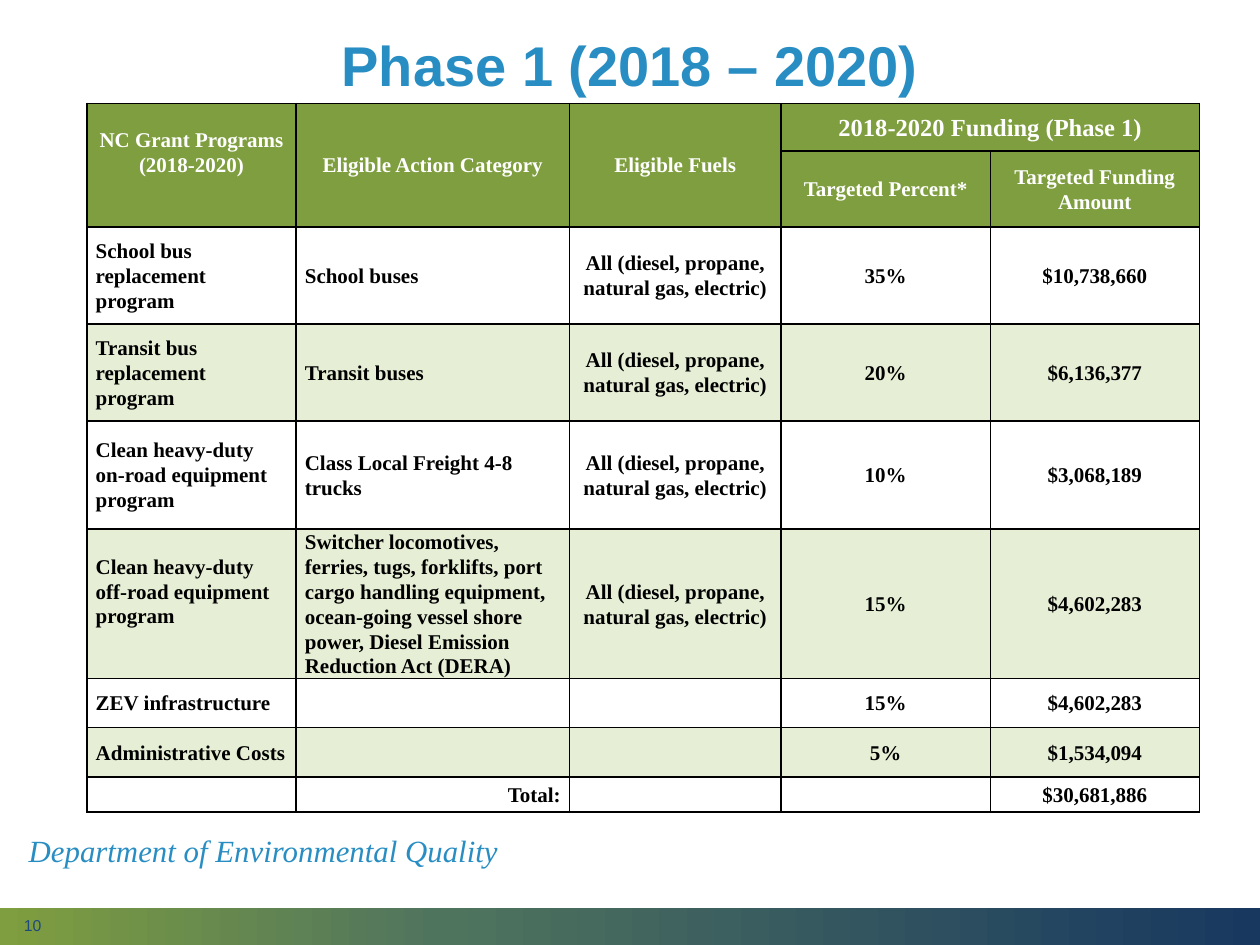
from lxml import etree
from pptx import Presentation
from pptx.dml.color import RGBColor
from pptx.enum import shapes, text
from pptx.oxml.ns import qn
from pptx.util import Inches, Pt

COLORS = {"green": "7F9E3F", "pale": "E6EFD6", "white": "FFFFFF", "black": "000000",
          "blue": "288DC2", "slate": "1F497D", "teal": "4F745E", "navy": "183860"}
SERIF, SANS = "Times New Roman", "Arial"
LEFT, CENTER, RIGHT = text.PP_ALIGN.LEFT, text.PP_ALIGN.CENTER, text.PP_ALIGN.RIGHT

TITLE = "Phase 1 (2018 – 2020)"
DEPARTMENT = "Department of Environmental Quality"
PAGE = "10"
FUELS = "All (diesel, propane, natural gas, electric)"
ROWS = [
    ["NC Grant Programs (2018-2020)", "Eligible Action Category", "Eligible Fuels",
     "2018-2020 Funding (Phase 1)", ""],
    ["", "", "", "Targeted Percent*", "Targeted Funding Amount"],
    ["School bus replacement program", "School buses", FUELS, "35%", "$10,738,660"],
    ["Transit bus replacement program", "Transit buses", FUELS, "20%", "$6,136,377"],
    ["Clean heavy-duty on-road equipment program", "Class Local Freight 4-8 trucks",
     FUELS, "10%", "$3,068,189"],
    ["Clean heavy-duty off-road equipment program",
     "Switcher locomotives, ferries, tugs, forklifts, port cargo handling equipment, "
     "ocean-going vessel shore power, Diesel Emission Reduction Act (DERA)",
     FUELS, "15%", "$4,602,283"],
    ["ZEV infrastructure", "", "", "15%", "$4,602,283"],
    ["Administrative Costs", "", "", "5%", "$1,534,094"],
    ["", "Total:", "", "", "$30,681,886"],
]
COL_WIDTHS = [1.66, 2.17, 1.68, 1.66, 1.66]
ROW_HEIGHTS = [0.38, 0.6, 0.77, 0.77, 0.86, 1.18, 0.39, 0.39, 0.28]
MERGES = [((0, 0), (1, 0)), ((0, 1), (1, 1)), ((0, 2), (1, 2)), ((0, 3), (0, 4))]
HEADER_ROWS = 2
RAISED = {(0, 0), (5, 0)}  # cells whose text sits above the middle
BAR_STOPS = [(0, "green"), (35, "teal"), (100, "navy")]


def rgb(name):
    return RGBColor.from_string(COLORS[name])


def write(p, words, color, align=LEFT, spacing=1.0, **font):
    p.alignment, p.line_spacing = align, spacing
    if not words:
        etree.SubElement(p._p, qn("a:endParaRPr"), sz=str(font["size"].pt * 100)[:4])
        return
    r = p.add_run()
    r.text = words
    r.font.color.rgb = rgb(color)
    for key, value in font.items():
        setattr(r.font, key, value)


def frame(tf, **margins):
    tf.word_wrap = True
    tf.auto_size = text.MSO_AUTO_SIZE.NONE
    tf.vertical_anchor = text.MSO_ANCHOR.MIDDLE
    for side, value in margins.items():
        setattr(tf, "margin_" + side, Inches(value))
    return tf.paragraphs[0]


def add_label(s, box, words, color, **fmt):
    p = frame(s.shapes.add_textbox(*map(Inches, box)).text_frame, top=0, bottom=0)
    write(p, words, color, **fmt)


def add_bar(s):
    bar = s.shapes.add_shape(shapes.MSO_SHAPE.RECTANGLE,
                             *map(Inches, (0, 7.21, 10, 0.29)))
    bar.shadow.inherit = False
    bar.line.fill.background()
    bar.fill.gradient()
    bar.fill.gradient_angle = 0
    stops = bar._element.spPr.find(".//" + qn("a:gsLst"))
    for old in list(stops):
        stops.remove(old)
    for percent, color in BAR_STOPS:
        stop = etree.SubElement(stops, qn("a:gs"), pos=str(percent * 1000))
        etree.SubElement(stop, qn("a:srgbClr"), val=COLORS[color])


def add_borders(cell):
    """Put a 1 pt black line on every side, ahead of the cell's fill."""
    tc_pr = cell._tc.get_or_add_tcPr()
    for i, side in enumerate(("lnL", "lnR", "lnT", "lnB")):
        line = etree.Element(qn("a:" + side), w=str(Pt(1)))
        fill = etree.SubElement(line, qn("a:solidFill"))
        etree.SubElement(fill, qn("a:srgbClr"), val=COLORS["black"])
        tc_pr.insert(i, line)


def alignment(row, col, words):
    if words == "Total:":
        return RIGHT
    return CENTER if row < HEADER_ROWS or col > 1 else LEFT


def add_funding_table(s):
    table = s.shapes.add_table(len(ROWS), len(COL_WIDTHS), Inches(0.69), Inches(0.82),
                               Inches(sum(COL_WIDTHS)), Inches(sum(ROW_HEIGHTS))).table
    for column, width in zip(table.columns, COL_WIDTHS):
        column.width = Inches(width)
    for table_row, height in zip(table.rows, ROW_HEIGHTS):
        table_row.height = Inches(height)
    for first, last in MERGES:
        table.cell(*first).merge(table.cell(*last))
    for row, values in enumerate(ROWS):
        header = row < HEADER_ROWS
        fill = "green" if header else ("white", "pale")[row % 2]
        for col, words in enumerate(values):
            cell = table.cell(row, col)
            cell.fill.solid()
            cell.fill.fore_color.rgb = rgb(fill)
            add_borders(cell)
            cell.vertical_anchor = text.MSO_ANCHOR.MIDDLE
            cell.margin_left = cell.margin_right = Inches(0.07)
            cell.margin_top = 0
            cell.margin_bottom = Inches(0.2 if (row, col) in RAISED else 0)
            write(cell.text_frame.paragraphs[0], words, "white" if header else "black",
                  alignment(row, col, words), 1.07, name=SERIF, bold=True,
                  size=Pt(14 if (row, col) == (0, 3) else 12))


def main():
    prs = Presentation()
    prs.slide_width, prs.slide_height = Inches(10), Inches(7.5)
    s = prs.slides.add_slide(prs.slide_layouts[5])
    add_bar(s)

    title = s.shapes.title
    title.left, title.top, title.width, title.height = map(Inches, (0.69, 0.11, 8.62, 1.16))
    write(frame(title.text_frame, top=0.05, bottom=0.35), TITLE, "blue", CENTER, 0.9,
          name=SANS, size=Pt(32), bold=True)

    add_label(s, (0.09, 7.27, 2.25, 0.15), PAGE, "slate", name=SANS, size=Pt(9))
    add_label(s, (0.13, 6.56, 4.1, 0.41), DEPARTMENT, "blue", spacing=0.9,
              name=SERIF, size=Pt(17.6), italic=True)
    add_funding_table(s)
    prs.save("out.pptx")


if __name__ == "__main__":
    main()
